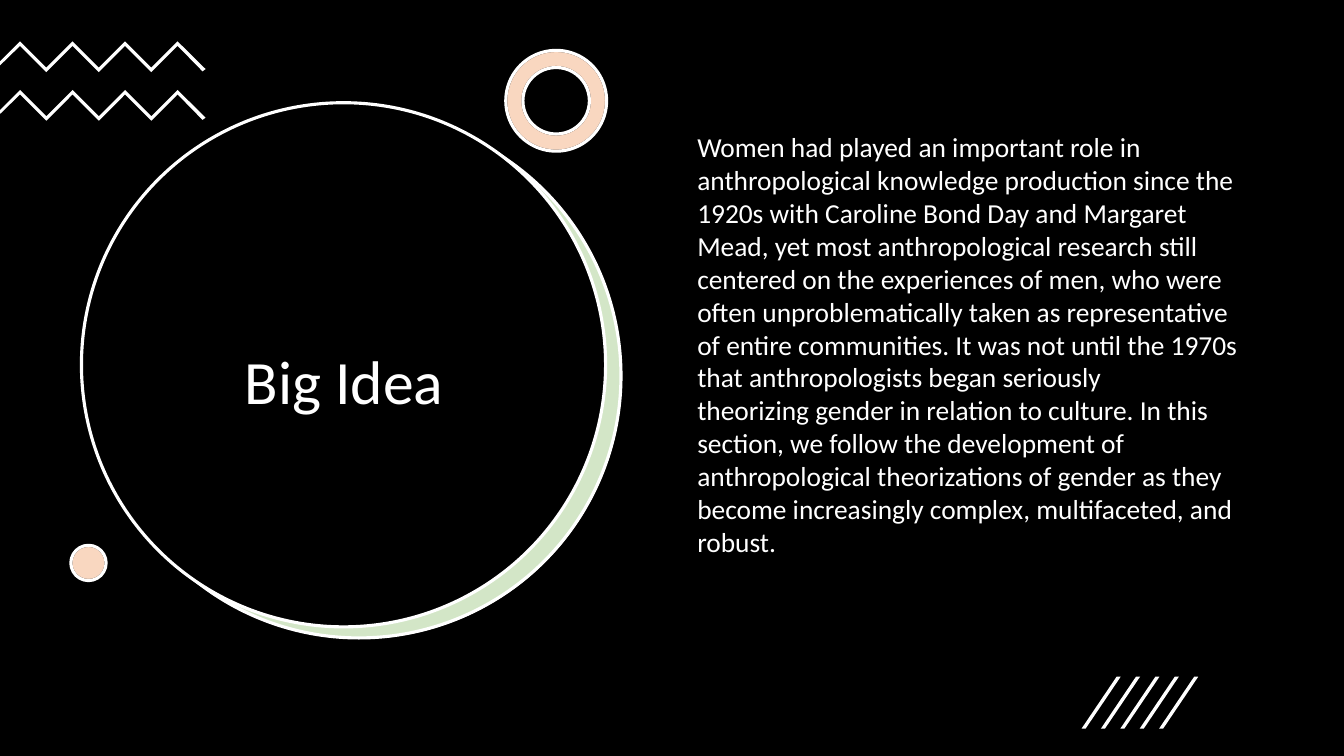
from lxml.etree import SubElement
from pptx import Presentation
from pptx.dml.color import RGBColor
from pptx.enum.shapes import MSO_SHAPE
from pptx.enum.text import MSO_ANCHOR, PP_ALIGN
from pptx.oxml.ns import qn
from pptx.util import Pt

COLORS = {"black": "000000", "white": "FFFFFF", "green": "70AD47", "orange": "ED7D31"}
HARD_SPACE = chr(160)
BODY = (
    "Women had played an important role in anthropological knowledge production "
    f"since the 1920s with{HARD_SPACE}Caroline Bond Day and Margaret Mead, yet most "
    "anthropological research still centered on the experiences of men, who were "
    f"often unproblematically{HARD_SPACE}taken as representative of entire "
    "communities. It was not until the 1970s that anthropologists began seriously "
    f"theorizing{HARD_SPACE}gender in relation to culture. In this section, we "
    "follow the development of anthropological theorizations of gender as they "
    "become increasingly complex, multifaceted, and robust."
)


class SlideBuilder:
    font_name = "Calibri"
    line_width = 2.25

    def __init__(self, slide):
        self.slide = slide

    def paint(self, shape, fill, line=None, opacity=None):
        shape.shadow.inherit = False
        shape.fill.solid()
        shape.fill.fore_color.rgb = RGBColor.from_string(COLORS[fill])
        if opacity is not None:
            color = shape.fill._xPr.find(qn("a:solidFill"))[0]
            SubElement(color, qn("a:alpha")).set("val", str(opacity * 1000))
        if line:
            shape.line.color.rgb = RGBColor.from_string(COLORS[line])
            shape.line.width = Pt(self.line_width)
        else:
            shape.line.fill.background()

    def preset(self, kind, box, fill, line=None, opacity=None, adjustment=None):
        shape = self.slide.shapes.add_shape(kind, *map(Pt, box))
        if adjustment is not None:
            shape.adjustments[0] = adjustment
        self.paint(shape, fill, line, opacity)

    def tinted(self, kind, box, adjustment=None):
        self.preset(kind, box, "white", "black", adjustment=adjustment)
        self.preset(kind, box, "orange", "white", 30, adjustment)

    def polygon(self, points, fill):
        start, *rest = [(Pt(x), Pt(y)) for x, y in points]
        builder = self.slide.shapes.build_freeform(*start)
        builder.add_line_segments(rest, close=True)
        self.paint(builder.convert_to_shape(), fill)

    def zigzag(self, top, left=14.4, step=18.75, thickness=3.2):
        upper = [(left + step * i, top + step * (i % 2)) for i in range(7)]
        lower = [(x, y + thickness) for x, y in reversed(upper)]
        tip = [(146.9, top + 19.8), (144.7, top + 21.4)]
        edge = [(0, top + 17.2), (0, top + 14.4)]
        self.polygon(upper + tip + lower + edge, "white")

    def text(self, box, content, size, spacing, align, anchor):
        frame = self.slide.shapes.add_textbox(*map(Pt, box)).text_frame
        frame.word_wrap = True
        frame.vertical_anchor = anchor
        paragraph = frame.paragraphs[0]
        paragraph.text = content
        paragraph.alignment = align
        paragraph.line_spacing = spacing
        paragraph.font.name = self.font_name
        paragraph.font.size = Pt(size)
        paragraph.font.color.rgb = RGBColor.from_string(COLORS["white"])


def main():
    presentation = Presentation()
    presentation.slide_width, presentation.slide_height = Pt(960), Pt(540)
    builder = SlideBuilder(presentation.slides.add_slide(presentation.slide_layouts[6]))

    builder.preset(MSO_SHAPE.RECTANGLE, (0, 0, 960, 540), "black")
    builder.preset(MSO_SHAPE.OVAL, (69.8, 82, 374.4, 374.4), "white")
    builder.preset(MSO_SHAPE.OVAL, (69.2, 81.3, 374.4, 374.4), "green", "white", 30)
    builder.preset(MSO_SHAPE.OVAL, (58.2, 73.4, 374.4, 374.4), "black", "white")
    builder.text((87.1, 148.1, 317.5, 253.4), "Big Idea", 44, 0.9,
                 PP_ALIGN.CENTER, MSO_ANCHOR.MIDDLE)
    for top in (29.6, 64.3):
        builder.zigzag(top)
    builder.tinted(MSO_SHAPE.DONUT, (361.3, 36, 72, 72), 0.17)
    builder.tinted(MSO_SHAPE.OVAL, (50.6, 389.5, 25.2, 25.2))
    builder.text((491, 89.5, 411.1, 342.7), BODY, 19.6, 1.0,
                 PP_ALIGN.LEFT, MSO_ANCHOR.TOP)
    for i in range(5):
        left = 772.6 + 13.85 * i
        builder.polygon([(left + 2.9, 520.4), (left, 520.4),
                         (left + 25, 483.4), (left + 27.9, 483.4)], "white")

    presentation.save("out.pptx")


if __name__ == "__main__":
    main()
